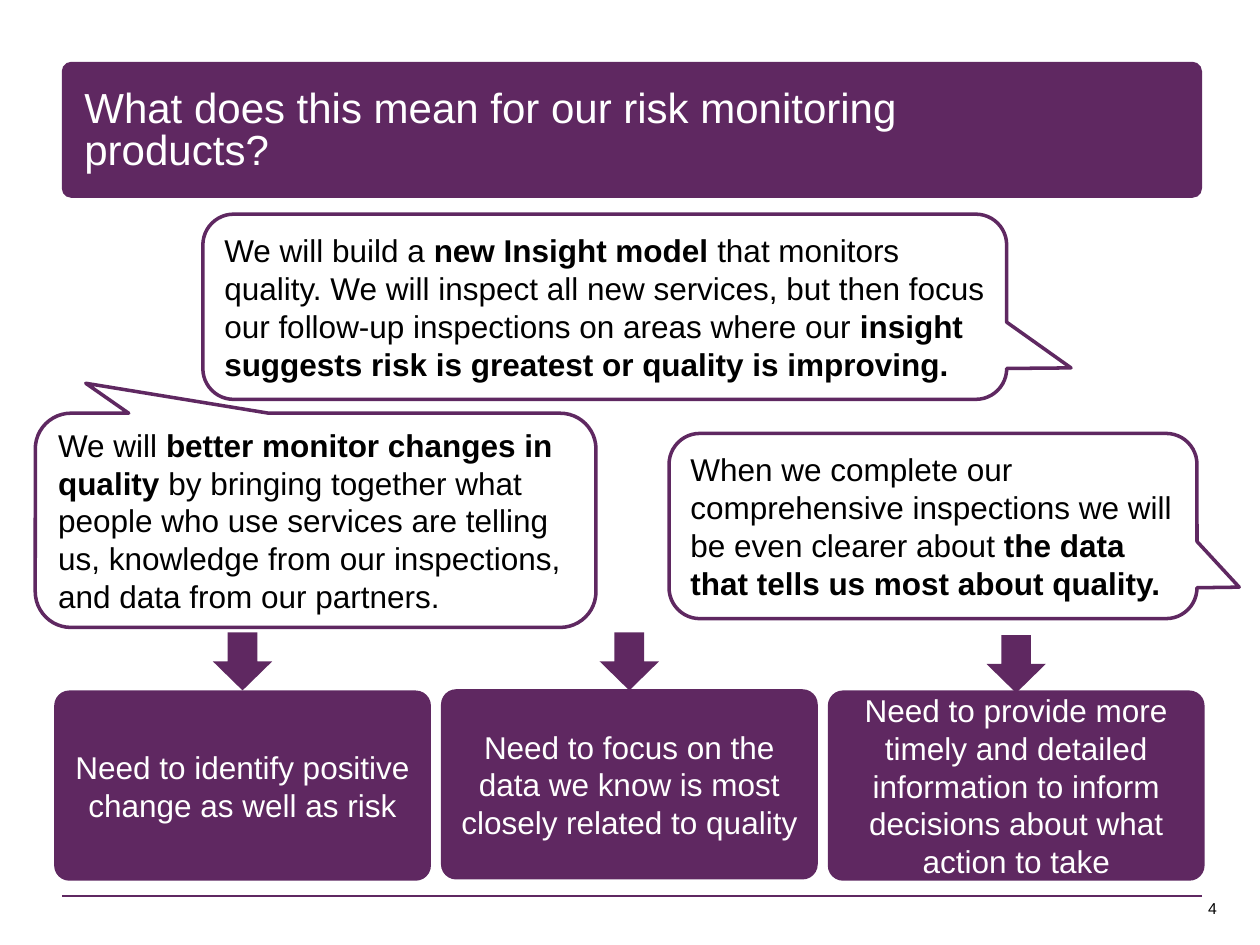
from pptx import Presentation
from pptx.dml.color import RGBColor
from pptx.enum.shapes import MSO_CONNECTOR, MSO_SHAPE
from pptx.enum.text import MSO_ANCHOR, PP_ALIGN
from pptx.util import Inches, Pt
from lxml import etree

ROUNDED = MSO_SHAPE.ROUNDED_RECTANGLE
CALLOUT = MSO_SHAPE.ROUNDED_RECTANGULAR_CALLOUT
ARROW = MSO_SHAPE.DOWN_ARROW
MIDDLE = MSO_ANCHOR.MIDDLE
LEFT, CENTER = PP_ALIGN.LEFT, PP_ALIGN.CENTER
COLORS = {name: RGBColor.from_string(value) for name, value in
          {"purple": "5F2861", "white": "FFFFFF", "black": "000000"}.items()}

prs = Presentation()
prs.slide_width, prs.slide_height = Inches(10), Inches(7.5)
slide = prs.slides.add_slide(prs.slide_layouts[5])
shapes = slide.shapes


def add_purple(kind, left, top, width, height):
    """Add a solid purple shape without outline or shadow."""
    shape = shapes.add_shape(kind, Inches(left), Inches(top), Inches(width), Inches(height))
    shape.shadow.inherit = False
    shape.fill.solid()
    shape.fill.fore_color.rgb = COLORS["purple"]
    shape.line.fill.background()
    return shape


def format_text(paragraph, size, color, align):
    paragraph.alignment = align
    paragraph.font.name = "Arial"
    paragraph.font.size = Pt(size)
    paragraph.font.color.rgb = COLORS[color]


# Title banner, placed behind the title
banner = add_purple(ROUNDED, 0.49, 0.49, 9.05, 1.08)
banner.adjustments[0] = 0.07
title = shapes.title
title._element.addprevious(banner._element)
title.left, title.top = Inches(0.67), Inches(0.55)
title.width, title.height = Inches(6.54), Inches(0.99)
title_frame = title.text_frame
title_frame.text = "What does this mean for our risk monitoring products?"
title_frame.vertical_anchor = MIDDLE
title_frame.margin_left = title_frame.margin_right = 0
title_frame.margin_top = title_frame.margin_bottom = 0
title_frame.paragraphs[0].line_spacing = 0.85
format_text(title_frame.paragraphs[0], 24, "white", LEFT)

# Footer rule and page number
rule = shapes.add_connector(MSO_CONNECTOR.STRAIGHT, Inches(9.54), Inches(7.11),
                            Inches(0.49), Inches(7.11))
rule.line.color.rgb = COLORS["purple"]
rule.line.width = Pt(1)
etree.SubElement(rule._element.spPr,
                 "{http://schemas.openxmlformats.org/drawingml/2006/main}effectLst")
page_number = shapes.add_textbox(Inches(9.49), Inches(7.08), Inches(0.27), Inches(0.25))
page_number.text_frame.word_wrap = False
page_number.text_frame.text = "4"
format_text(page_number.text_frame.paragraphs[0], 9, "black", LEFT)

# Callouts: box, pointer tip, then (text, bold) runs
callouts = [
    ((1.61, 1.7, 6.38, 1.47), (0.58, 0.33), [
        ("We will build a ", False),
        ("new Insight model ", True),
        ("that monitors quality. We will inspect all new services, but then focus "
         "our follow-up inspections on areas where our ", False),
        ("insight suggests risk is greatest or quality is improving.", True)]),
    ((0.28, 3.28, 4.45, 1.7), (-0.41, -0.64), [
        ("We will ", False),
        ("better monitor changes in quality", True),
        (" by bringing together what people who use services are telling us, "
         "knowledge from our inspections, and data from our partners.", False)]),
    ((5.31, 3.44, 4.19, 1.47), (0.58, 0.33), [
        ("When we complete our comprehensive inspections we will be even clearer about ", False),
        ("the data that tells us most about quality.", True)]),
]
for box, tip, runs in callouts:
    callout = add_purple(CALLOUT, *box)
    callout.fill.background()
    callout.line.color.rgb = COLORS["purple"]
    callout.line.width = Pt(2)
    callout.adjustments[0], callout.adjustments[1] = tip
    callout.text_frame.vertical_anchor = MIDDLE
    statement = callout.text_frame.paragraphs[0]
    format_text(statement, 18, "black", LEFT)
    for text, bold in runs:
        run = statement.add_run()
        run.text = text
        run.font.bold = bold

# Needs, each with an arrow centred above it
needs = [
    ("Need to identify positive change as well as risk", 5.48, 5.02),
    ("Need to focus on the data we know is most closely related to quality", 5.47, 5.02),
    ("Need to provide more timely and detailed information to inform decisions "
     "about what action to take", 5.48, 5.04),
]
NEED_LEFT, NEED_STEP, NEED_WIDTH = 0.43, 3.07, 2.99
ARROW_WIDTH = 0.47
for column, (text, top, arrow_top) in enumerate(needs):
    left = NEED_LEFT + column * NEED_STEP
    need = add_purple(ROUNDED, left, top, NEED_WIDTH, 1.51)
    need.adjustments[0] = 0.08
    need.text_frame.vertical_anchor = MIDDLE
    need.text_frame.text = text
    format_text(need.text_frame.paragraphs[0], 18, "white", CENTER)
    add_purple(ARROW, left + (NEED_WIDTH - ARROW_WIDTH) / 2, arrow_top, ARROW_WIDTH, 0.46)

prs.save("out.pptx")
